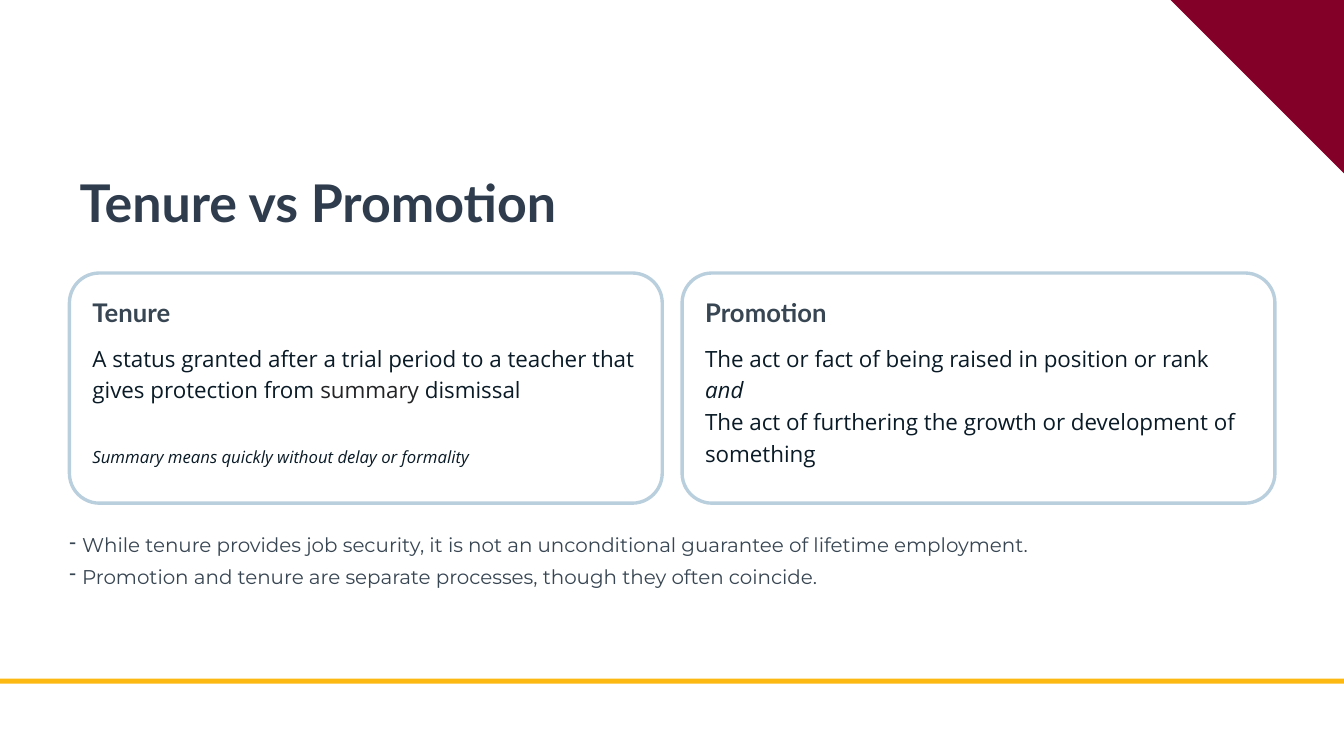
from dataclasses import dataclass, field

from lxml.etree import SubElement
from pptx import Presentation
from pptx.dml.color import RGBColor as RGB
from pptx.enum.shapes import MSO_SHAPE as SHAPE
from pptx.enum.text import MSO_ANCHOR as ANCHOR, PP_ALIGN as ALIGN
from pptx.oxml.ns import qn
from pptx.util import Cm, Pt

COLORS = {
    "white": "FFFFFF", "maroon": "830028", "gold": "FDB913", "border": "BACFDD",
    "title": "2E3C4E", "slate": "384653", "ink": "0A1B27", "charcoal": "242426",
}
TITLE = {"name": "Lato", "size": Pt(37.1), "bold": True, "color": "title"}
HEADING = {"name": "Lato", "size": Pt(18.3), "bold": True, "color": "slate"}
BODY = {"name": "Open Sans", "size": Pt(16), "color": "ink"}
ITALIC = {**BODY, "italic": True}
SMALL = {**ITALIC, "size": Pt(12)}
ACCENT = {**BODY, "color": "charcoal"}
NOTE = {"name": "Montserrat", "size": Pt(14.2), "color": "slate"}


@dataclass
class Run:
    text: str
    style: dict


@dataclass
class Para:
    runs: list[Run]
    leading: float = 22.5
    before: float = 0
    bullet: str = ""


@dataclass
class Card:
    heading: str
    body: list[Para] = field(default_factory=list)


CARDS = [
    Card("Tenure", [
        Para([Run("A status granted after a trial period to a teacher that "
                  "gives protection from ", BODY),
              Run("summary ", ACCENT), Run("dismissal", BODY)]),
        Para([Run("Summary means quickly without delay or formality", SMALL)],
             before=22.5),
    ]),
    Card("Promotion", [
        Para([Run("The act or fact of being raised in position or rank", BODY)]),
        Para([Run("and", ITALIC)]),
        Para([Run("The act of furthering the growth or development of something",
                  BODY)]),
    ]),
]
NOTES = [
    "While tenure provides job security, it is not an unconditional guarantee "
    "of lifetime employment.",
    "Promotion and tenure are separate processes, though they often coincide.",
]

# Layout in centimetres
SLIDE_W, SLIDE_H = 33.87, 19.05
MARGIN = 1.75
CARD_TOP, CARD_W, CARD_H, CARD_GAP = 6.88, 14.94, 5.8, 0.5
CARD_PAD, BODY_W = 0.58, 13.8
BULLET_INDENT = 0.32


def add_block(s, kind: SHAPE, x: float, y: float, w: float, h: float,
              fill: str, line: str = ""):
    sp = s.shapes.add_shape(kind, Cm(x), Cm(y), Cm(w), Cm(h))
    sp.shadow.inherit = False
    sp.fill.solid()
    sp.fill.fore_color.rgb = RGB.from_string(COLORS[fill])
    if line:
        sp.line.color.rgb = RGB.from_string(COLORS[line])
        sp.line.width = Pt(2.4)
    else:
        sp.line.fill.background()
    return sp


def add_bullet(p, char: str) -> None:
    pPr = p._p.get_or_add_pPr()
    pPr.set("marL", str(Cm(BULLET_INDENT)))
    pPr.set("indent", str(-Cm(BULLET_INDENT)))
    SubElement(pPr, qn("a:buChar"), char=char)


def add_text(s, x: float, y: float, w: float, h: float,
             paras: list[Para], wrap: bool = True) -> None:
    tf = s.shapes.add_textbox(Cm(x), Cm(y), Cm(w), Cm(h)).text_frame
    frame = {"word_wrap": wrap, "vertical_anchor": ANCHOR.TOP, "margin_left": 0,
             "margin_top": 0, "margin_right": 0, "margin_bottom": 0}
    for name, value in frame.items():
        setattr(tf, name, value)
    for i, para in enumerate(paras):
        p = tf.add_paragraph() if i else tf.paragraphs[0]
        p.alignment = ALIGN.LEFT
        p.line_spacing = Pt(para.leading)
        if para.before:
            p.space_before = Pt(para.before)
        if para.bullet:
            add_bullet(p, para.bullet)
        for run in para.runs:
            r = p.add_run()
            r.text = run.text
            for name, value in run.style.items():
                if name == "color":
                    r.font.color.rgb = RGB.from_string(COLORS[value])
                else:
                    setattr(r.font, name, value)


def add_card(s, x: float, card: Card) -> None:
    sp = add_block(s, SHAPE.ROUNDED_RECTANGLE, x, CARD_TOP, CARD_W, CARD_H,
                   "white", "border")
    sp.adjustments[0] = 0.13
    left = x + CARD_PAD
    add_text(s, left, 7.44, 6.6, 0.82,
             [Para([Run(card.heading, HEADING)], leading=23.3)], wrap=False)
    add_text(s, left, 8.58, BODY_W, 3.86, card.body)


def main() -> None:
    prs = Presentation()
    prs.slide_width, prs.slide_height = Cm(SLIDE_W), Cm(SLIDE_H)
    s = prs.slides.add_slide(prs.slide_layouts[6])

    # Corner and footer line
    corner = 4.37
    sp = add_block(s, SHAPE.RIGHT_TRIANGLE, SLIDE_W - corner, 0, corner, corner,
                   "maroon")
    sp.rotation = 180
    add_block(s, SHAPE.RECTANGLE, 0, 17.1, SLIDE_W, 0.13, "gold")

    # Title
    add_text(s, 2.01, 4.22, 13, 1.65,
             [Para([Run("Tenure vs Promotion", TITLE)], leading=46.7)], wrap=False)

    # Definition cards
    for i, card in enumerate(CARDS):
        add_card(s, MARGIN + i * (CARD_W + CARD_GAP), card)

    # Notes below the cards
    add_text(s, MARGIN, 13.23, 2 * CARD_W + CARD_GAP, 1.6,
             [Para([Run(note, NOTE)], bullet="-") for note in NOTES])

    prs.save("out.pptx")


if __name__ == "__main__":
    main()
